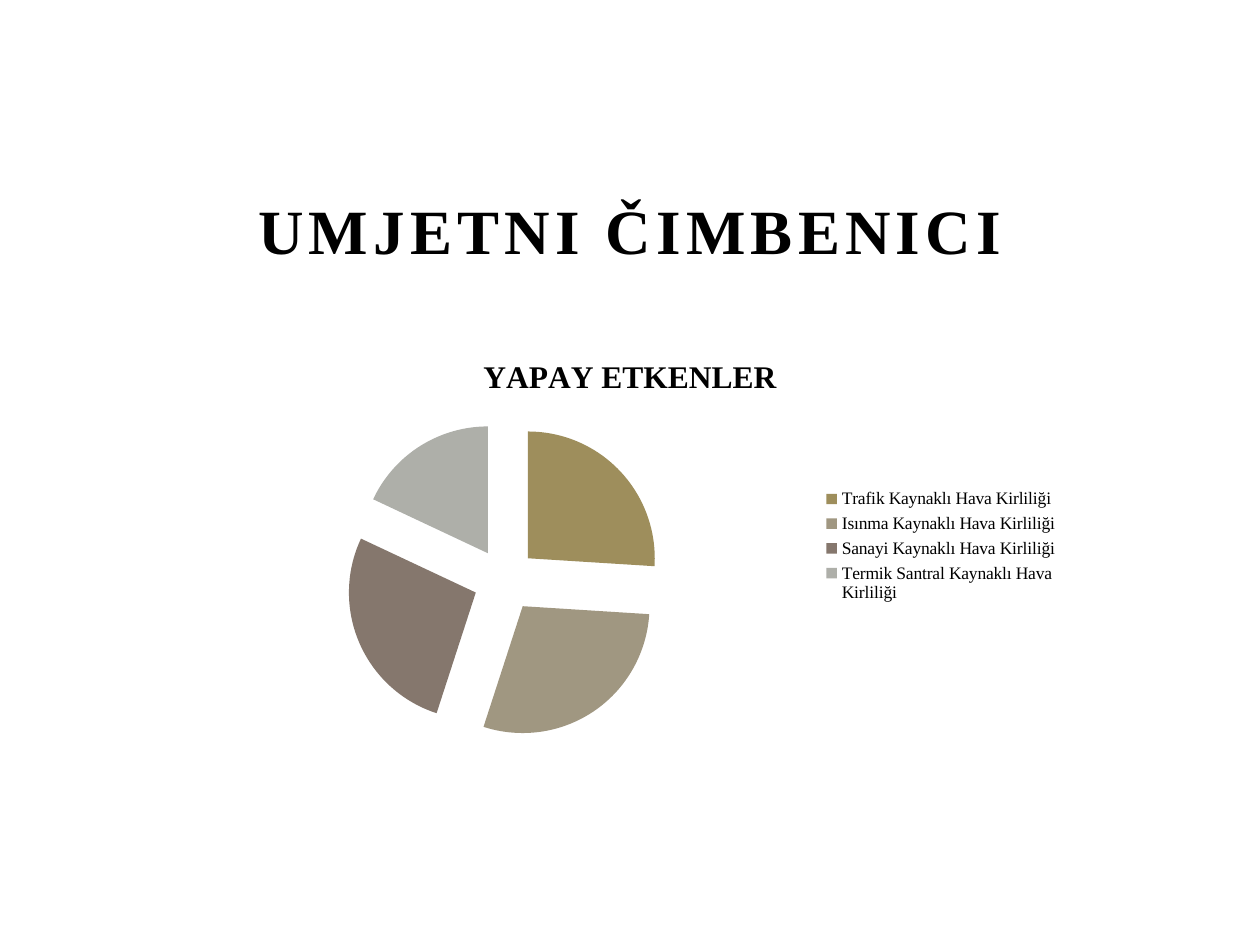
import pptx
import pptx.chart.data
import pptx.dml.color
import pptx.enum.chart
import pptx.enum.text
import pptx.oxml
import pptx.oxml.ns
import pptx.util

Pt = pptx.util.Pt
FONT = "Times New Roman"
COLORS = {
    "text": "000000",
    "traffic": "9E8E5C",
    "heating": "A09781",
    "industry": "85776D",
    "power": "AEAFA9",
}
SOURCES = [
    ("Trafik Kaynaklı Hava Kirliliği", 26, "traffic"),
    ("Isınma Kaynaklı Hava Kirliliği", 29, "heating"),
    ("Sanayi Kaynaklı Hava Kirliliği", 27, "industry"),
    ("Termik Santral Kaynaklı Hava Kirliliği", 18, "power"),
]
CHART_TITLE = "YAPAY ETKENLER"
LEFT, WIDTH = Pt(108), Pt(504)


def color(name):
    return pptx.dml.color.RGBColor.from_string(COLORS[name])


def style_font(font, size, bold=False):
    font.name = FONT
    font.size = Pt(size)
    font.bold = bold
    font.color.rgb = color("text")


def add_heading(page, text):
    box = page.shapes.add_textbox(LEFT, Pt(102), WIDTH, Pt(54))
    frame = box.text_frame
    frame.word_wrap = True
    frame.vertical_anchor = pptx.enum.text.MSO_ANCHOR.BOTTOM
    para = frame.paragraphs[0]
    para.alignment = pptx.enum.text.PP_ALIGN.CENTER
    span = para.add_run()
    span.text = text
    style_font(span.font, 36, True)
    span.font._element.set("spc", "300")


def explode_slices(series, percent):
    explosion = pptx.oxml.parse_xml(
        f'<c:explosion {pptx.oxml.ns.nsdecls("c")} val="{percent}"/>'
    )
    first_point = series._element.find(pptx.oxml.ns.qn("c:dPt"))
    first_point.addprevious(explosion)


def add_pie(page):
    data = pptx.chart.data.CategoryChartData()
    data.categories = [label for label, value, name in SOURCES]
    data.add_series(CHART_TITLE, [value for label, value, name in SOURCES])
    chart = page.shapes.add_chart(
        pptx.enum.chart.XL_CHART_TYPE.PIE, LEFT, Pt(192), WIDTH, Pt(240), data
    ).chart
    style_font(chart.font, 10)

    chart.has_title = True
    span = chart.chart_title.text_frame.paragraphs[0].add_run()
    span.text = CHART_TITLE
    style_font(span.font, 18, True)

    chart.has_legend = True
    chart.legend.position = pptx.enum.chart.XL_LEGEND_POSITION.RIGHT
    chart.legend.include_in_layout = False
    style_font(chart.legend.font, 10)

    plot = chart.plots[0]
    plot.vary_by_categories = True
    series = plot.series[0]
    for index, (label, value, name) in enumerate(SOURCES):
        fill = series.points[index].format.fill
        fill.solid()
        fill.fore_color.rgb = color(name)
    explode_slices(series, 25)


def main():
    deck = pptx.Presentation()
    deck.slide_width, deck.slide_height = Pt(720), Pt(540)
    page = deck.slides.add_slide(deck.slide_layouts[6])
    add_heading(page, "UMJETNI ČIMBENICI")
    add_pie(page)
    deck.save("out.pptx")


if __name__ == "__main__":
    main()
